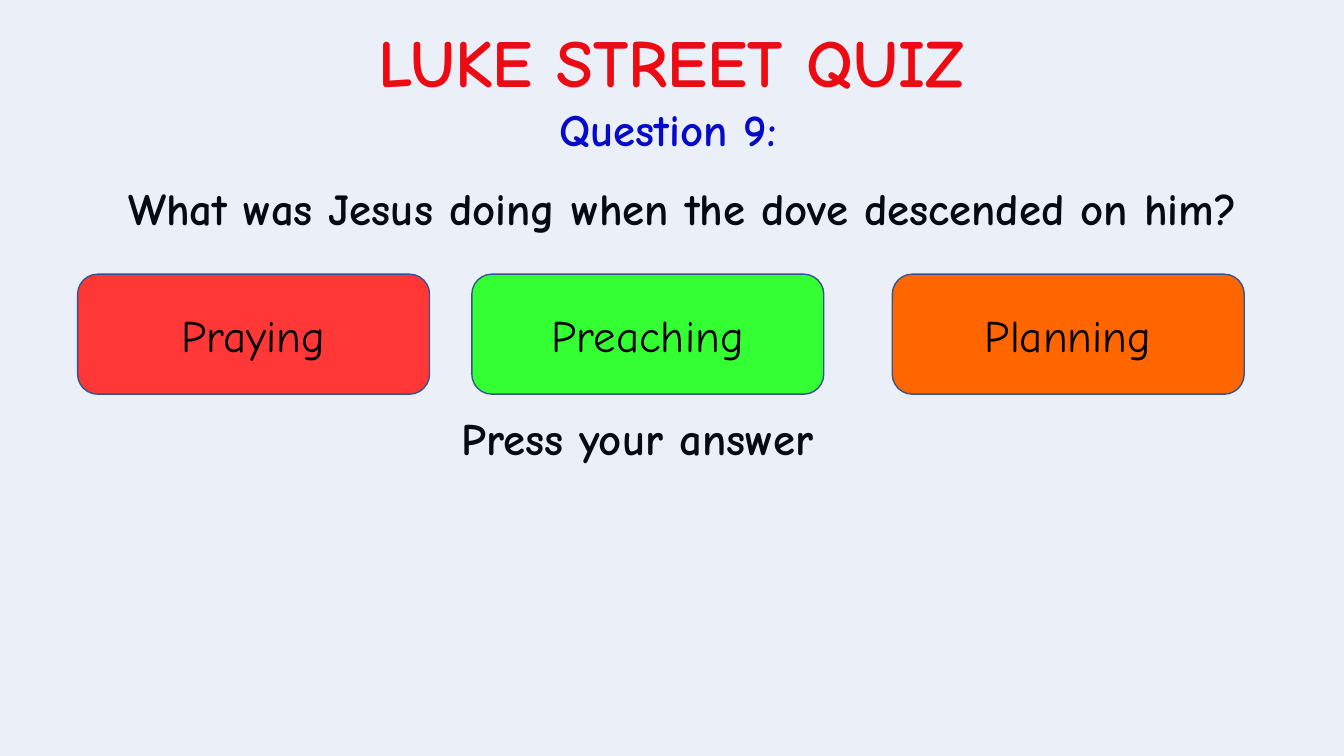
from lxml import etree
from pptx import Presentation
from pptx.dml.color import RGBColor
from pptx.enum import shapes, text
from pptx.oxml import ns
from pptx.util import Inches, Pt

FONT = "Comic Neue"
RED = RGBColor(0xFF, 0x00, 0x00)
BLUE = RGBColor(0x00, 0x00, 0xCC)
BLACK = RGBColor(0x00, 0x00, 0x00)
TINT = RGBColor(0x44, 0x72, 0xC4)
EDGE = RGBColor(0x32, 0x54, 0x91)
ANSWERS = [
    ("Praying", 0.77, RGBColor(0xFF, 0x37, 0x37)),
    ("Preaching", 4.68, RGBColor(0x33, 0xFF, 0x33)),
    ("Planning", 8.85, RGBColor(0xFF, 0x66, 0x00)),
]


def write(frame, words, color=BLACK, size=32, bold=True, align=text.PP_ALIGN.CENTER):
    paragraph = frame.paragraphs[0]
    paragraph.alignment = align
    run = paragraph.add_run()
    run.text = words
    run.font.name = FONT
    run.font.size = Pt(size)
    run.font.bold = bold
    run.font.color.rgb = color
    return paragraph


def add_line(slide, box, words, wrap=True, **style):
    frame = slide.shapes.add_textbox(*map(Inches, box)).text_frame
    frame.word_wrap = wrap
    return write(frame, words, **style)


def add_panel(slide, kind, box, color):
    panel = slide.shapes.add_shape(kind, *map(Inches, box))
    panel.shadow.inherit = False
    panel.fill.solid()
    panel.fill.fore_color.rgb = color
    panel.line.color.rgb = EDGE
    panel.line.width = Pt(1)
    return panel


def add_title(slide, box):
    title = add_line(slide, box, "LUKE STREET QUIZ", wrap=False, color=RED, size=48)
    # Thin blue outline around the letters
    outline = etree.Element(ns.qn("a:ln"), w=str(Pt(1.06)))
    fill = etree.SubElement(outline, ns.qn("a:solidFill"))
    etree.SubElement(fill, ns.qn("a:srgbClr"), val="0000FF")
    title.runs[0].font._element.insert(0, outline)


def add_question(slide, box):
    left, top, width, height = box
    add_line(slide, (left + 4.08, top, 4.41, 0.64), "Question 9:", color=BLUE)
    question = add_line(slide, (left, top + 0.8, width, height - 0.8),
                        "What was Jesus doing when the dove descended on him?")
    question.line_spacing = Pt(37)
    question.space_before = Pt(10)


def add_prompt(slide, box):
    prompt = add_line(slide, box, "Press your answer", align=text.PP_ALIGN.LEFT)
    prompt.line_spacing = 0.9
    prompt.space_before = Pt(7.5)


def add_tint(slide, box):
    tint = add_panel(slide, shapes.MSO_SHAPE.RECTANGLE, box, TINT)
    color = tint._element.spPr.find(ns.qn("a:solidFill"))[0]
    etree.SubElement(color, ns.qn("a:alpha"), val="10000")


def add_answers(slide, top, width, height):
    for words, left, color in ANSWERS:
        button = add_panel(slide, shapes.MSO_SHAPE.ROUNDED_RECTANGLE,
                           (left, top, width, height), color)
        button.text_frame.vertical_anchor = text.MSO_ANCHOR.MIDDLE
        write(button.text_frame, words, bold=False)


def main():
    deck = Presentation()
    deck.slide_width, deck.slide_height = Inches(13.33), Inches(7.5)
    slide = deck.slides.add_slide(deck.slide_layouts[6])

    # Heading, question and prompt
    add_title(slide, (3.12, 0.15, 7.08, 0.91))
    add_question(slide, (0.34, 0.96, 12.87, 1.99))
    add_prompt(slide, (4.48, 4.09, 6.73, 0.72))

    # Pale tint over the slide, then the answer buttons
    add_tint(slide, (-0.31, -0.86, 14.19, 8.73))
    add_answers(slide, top=2.72, width=3.49, height=1.19)

    deck.save("out.pptx")


if __name__ == "__main__":
    main()
